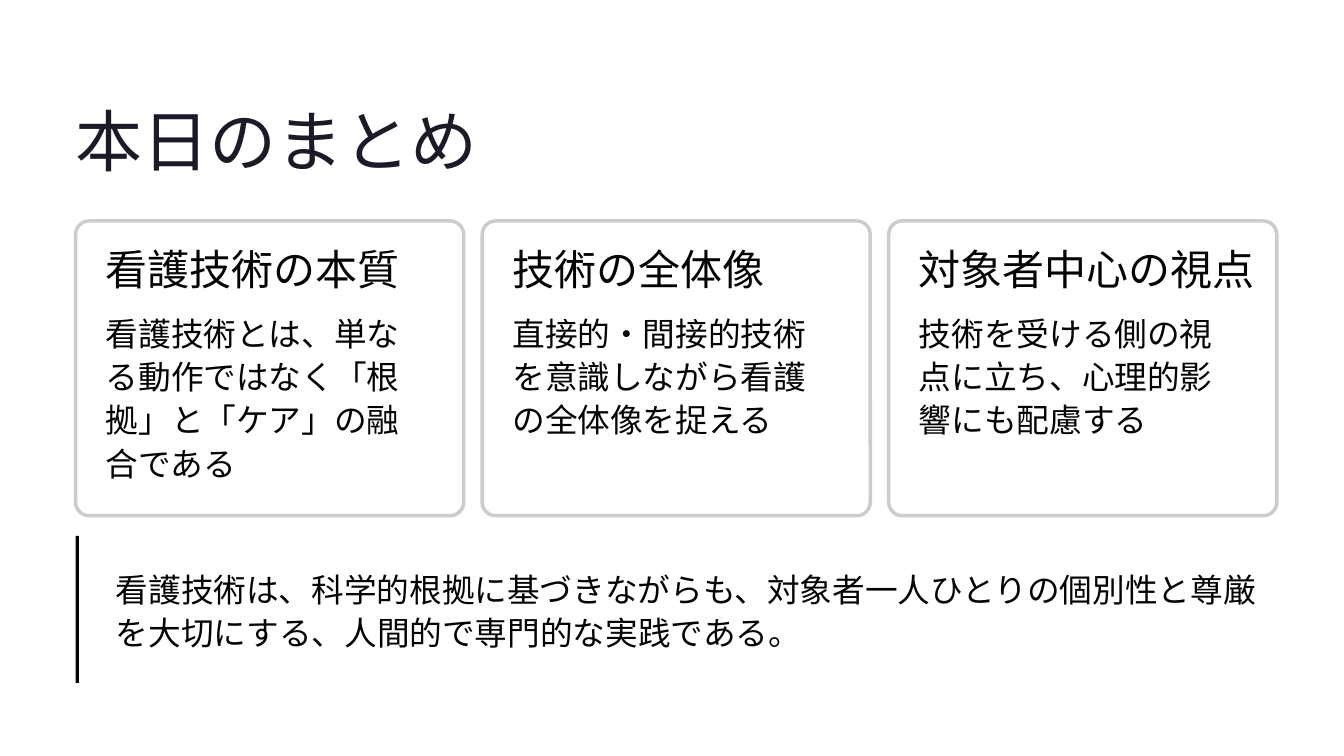
from lxml import etree
from pptx import Presentation
from pptx.dml.color import RGBColor
from pptx.enum.shapes import MSO_SHAPE
from pptx.enum.text import MSO_ANCHOR, MSO_AUTO_SIZE, PP_ALIGN
from pptx.oxml.ns import qn
from pptx.util import Pt

RECT, ROUNDED = MSO_SHAPE.RECTANGLE, MSO_SHAPE.ROUNDED_RECTANGLE
TOP, LEFT, NO_FIT = MSO_ANCHOR.TOP, PP_ALIGN.LEFT, MSO_AUTO_SIZE.NONE
PX = 9144
TITLE_ONLY = 5
COLORS = {"title": "1B1B27", "text": "030303", "card": "FFFFFF", "border": "CCCCCC"}
HEADING, BODY = "Inter", "Lato"
CARDS = [
    ("看護技術の本質", "看護技術とは、単なる動作ではなく「根拠」と「ケア」の融合である"),
    ("技術の全体像", "直接的・間接的技術を意識しながら看護の全体像を捉える"),
    ("対象者中心の視点", "技術を受ける側の視点に立ち、心理的影響にも配慮する"),
]
CONCLUSION = (
    "看護技術は、科学的根拠に基づきながらも、対象者一人ひとりの個別性と尊厳を"
    "大切にする、人間的で専門的な実践である。"
)


def rgb(name):
    """Return the palette colour of that name."""
    return RGBColor.from_string(COLORS[name])


def emu(*lengths):
    """Turn px lengths into EMU."""
    return [n * PX for n in lengths]


def write(sp, text, size=28, font=BODY, color="text", leading=37, wrap=True):
    """Fill a text shape with one formatted paragraph."""
    tf = sp.text_frame
    tf.auto_size, tf.word_wrap, tf.vertical_anchor = NO_FIT, wrap, TOP
    tf.margin_left = tf.margin_top = tf.margin_right = tf.margin_bottom = 0
    p = tf.paragraphs[0]
    p.alignment, p.line_spacing = LEFT, Pt(leading)
    p.space_before = Pt(0)
    r = p.add_run()
    r.text = text
    r.font.size, r.font.name = Pt(size), font
    r.font.color.rgb = rgb(color)


def add_block(s, kind, x, y, w, h, fill):
    """Add a flat filled shape without an outline."""
    sp = s.shapes.add_shape(kind, *emu(x, y, w, h))
    sp.shadow.inherit = False
    sp.fill.solid()
    sp.fill.fore_color.rgb = rgb(fill)
    sp.line.fill.background()
    return sp


def add_title(s, x, y, w, h):
    """Place the slide title in its placeholder."""
    sp = s.shapes.title
    sp.left, sp.top, sp.width, sp.height = emu(x, y, w, h)
    write(sp, "本日のまとめ", size=57.5, font=HEADING, color="title", leading=72, wrap=False)


def add_card(s, x, y, w, h, heading, body):
    """Draw an outlined card with a heading and body text."""
    sp = add_block(s, ROUNDED, x, y, w, h, "card")
    sp.adjustments[0] = 0.046
    sp.line.color.rgb, sp.line.width = rgb("border"), Pt(3)
    color = sp.fill._xPr.find(qn("a:solidFill"))[0]
    etree.SubElement(color, qn("a:alpha")).set("val", "95000")
    inner = w - 74
    head = s.shapes.add_textbox(*emu(x + 36, y + 37, inner, 59))
    write(head, heading, size=36, font=HEADING, leading=36, wrap=False)
    write(s.shapes.add_textbox(*emu(x + 36, y + 106, inner, 183)), body)


def add_conclusion(s, x, y, w, h):
    """Draw the closing statement beside a vertical bar."""
    write(s.shapes.add_textbox(*emu(x + 48, y + 36, w - 58, h - 72)), CONCLUSION)
    add_block(s, RECT, x, y, 4, h, "text")


def main():
    """Build and save the summary slide."""
    prs = Presentation()
    prs.slide_width, prs.slide_height = emu(1600, 900)
    s = prs.slides.add_slide(prs.slide_layouts[TITLE_ONLY])
    left, width, gap = 90, 1430, 22
    card_w = (width - gap * (len(CARDS) - 1)) // len(CARDS)
    add_title(s, left, 114, 804, 100)
    for i, (heading, body) in enumerate(CARDS):
        add_card(s, left + i * (card_w + gap), 263, card_w, 351, heading, body)
    add_conclusion(s, left, 638, width, 175)
    prs.save("out.pptx")


if __name__ == "__main__":
    main()
